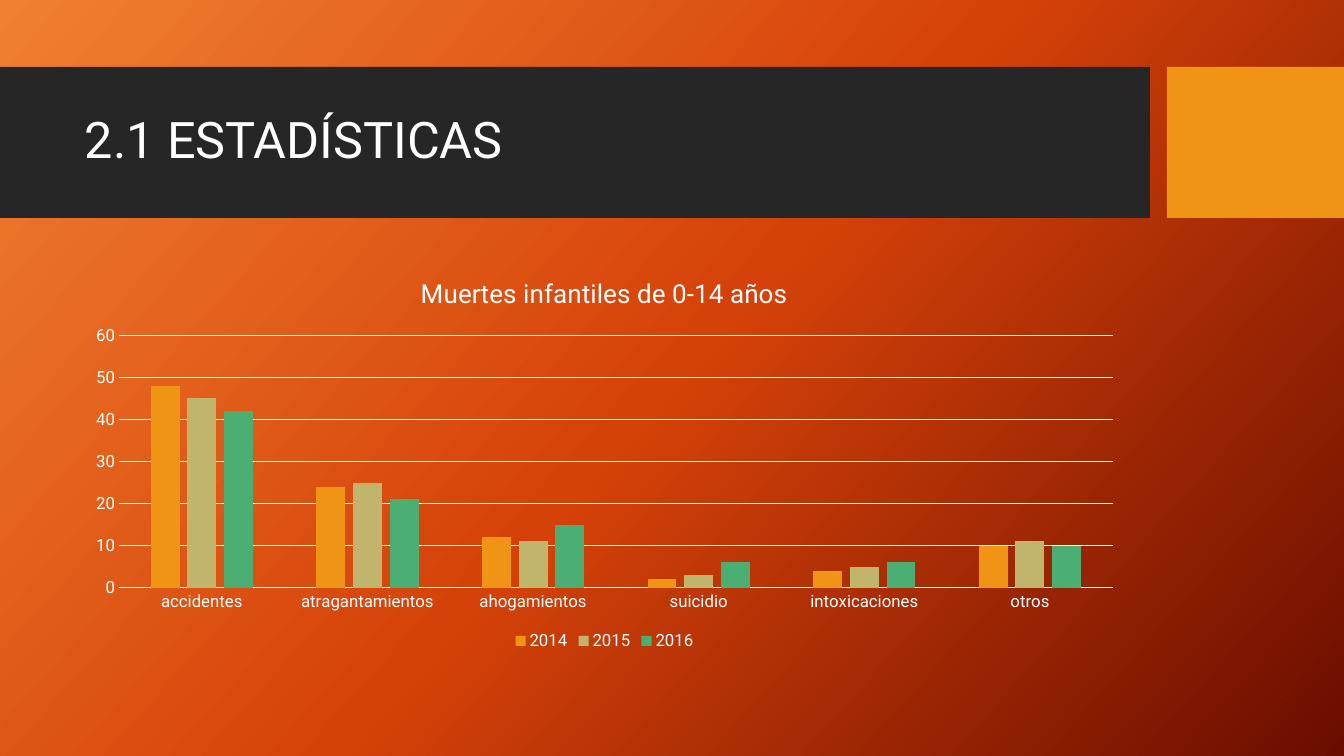
import pptx
import pptx.chart.data
import pptx.dml.color
import pptx.enum.chart
import pptx.enum.shapes
import pptx.enum.text
import pptx.oxml.ns
import pptx.util
from lxml import etree

TITLE = "2.1 ESTADÍSTICAS"
CHART_TITLE = "Muertes infantiles de 0-14 años"
CAUSES = ["accidentes", "atragantamientos", "ahogamientos",
          "suicidio", "intoxicaciones", "otros"]
DEATHS = {
    "2014": (48, 24, 12, 2, 4, 10),
    "2015": (45, 25, 11, 3, 5, 11),
    "2016": (42, 21, 15, 6, 6, 10),
}

THEME = {
    "font": "Roboto",
    "text": "FFFFFF",
    "band": "262626",
    "accent": "F09415",
    "series": ("F09415", "C1B56B", "4BAF73"),
    "background": ((0, "F18031"), (50, "D54209"), (100, "6A0D00")),
    "background_angle": 42,
    "title_size": 36,
    "chart_title_size": 18.6,
    "label_size": 12,
    "line_width": 0.75,
}

# Left, top, width, height in px
SLIDE_SIZE = (1344, 756)
BAND = (0, 67, 1150, 151)
ACCENT = (1167, 67, 177, 151)
TITLE_BOX = (75, 83, 1059, 119)
CHART_BOX = (75, 258, 1059, 397)
PX_PER_INCH = 100.8


def emu(box):
    return [pptx.util.Inches(px / PX_PER_INCH) for px in box]


def rgb(color):
    return pptx.dml.color.RGBColor.from_string(color)


def style_font(font, size):
    font.name = THEME["font"]
    font.size = pptx.util.Pt(size)
    font.bold = False
    font.color.rgb = rgb(THEME["text"])


def style_line(line):
    line.color.rgb = rgb(THEME["text"])
    line.width = pptx.util.Pt(THEME["line_width"])


def paint_background(s):
    qn = pptx.oxml.ns.qn
    fill = s.background.fill
    fill.gradient()
    # The angle property counts counter-clockwise
    fill.gradient_angle = 360 - THEME["background_angle"]
    stops = s.element.find(".//" + qn("a:gsLst"))
    for stop in list(stops):
        stops.remove(stop)
    for percent, color in THEME["background"]:
        stop = etree.SubElement(stops, qn("a:gs"), pos=str(percent * 1000))
        etree.SubElement(stop, qn("a:srgbClr"), val=color)


def add_block(s, box, color):
    sp = s.shapes.add_shape(pptx.enum.shapes.MSO_SHAPE.RECTANGLE, *emu(box))
    sp.shadow.inherit = False
    sp.fill.solid()
    sp.fill.fore_color.rgb = rgb(color)
    sp.line.fill.background()


def add_title(s):
    tf = s.shapes.add_textbox(*emu(TITLE_BOX)).text_frame
    tf.word_wrap = True
    tf.vertical_anchor = pptx.enum.text.MSO_ANCHOR.MIDDLE
    p = tf.paragraphs[0]
    p.text = TITLE
    p.line_spacing = 0.9
    style_font(p.font, THEME["title_size"])


def add_deaths_chart(s):
    enum = pptx.enum.chart
    data = pptx.chart.data.CategoryChartData()
    data.categories = CAUSES
    for year, values in DEATHS.items():
        data.add_series(year, values)
    chart = s.shapes.add_chart(
        enum.XL_CHART_TYPE.COLUMN_CLUSTERED, *emu(CHART_BOX), data).chart
    style_font(chart.font, THEME["label_size"])

    chart.has_title = True
    p = chart.chart_title.text_frame.paragraphs[0]
    p.text = CHART_TITLE
    style_font(p.font, THEME["chart_title_size"])
    chart.chart_title.include_in_layout = False

    chart.has_legend = True
    chart.legend.position = enum.XL_LEGEND_POSITION.BOTTOM
    chart.legend.include_in_layout = False
    style_font(chart.legend.font, THEME["label_size"])

    plot = chart.plots[0]
    plot.vary_by_categories = False
    plot.gap_width = 219
    plot.overlap = -27
    for series, color in zip(plot.series, THEME["series"]):
        series.format.fill.solid()
        series.format.fill.fore_color.rgb = rgb(color)

    for axis in (chart.category_axis, chart.value_axis):
        axis.major_tick_mark = enum.XL_TICK_MARK.NONE
        axis.minor_tick_mark = enum.XL_TICK_MARK.NONE
        style_font(axis.tick_labels.font, THEME["label_size"])
    style_line(chart.category_axis.format.line)

    axis = chart.value_axis
    axis.minimum_scale, axis.maximum_scale, axis.major_unit = 0, 60, 10
    axis.format.line.fill.background()
    axis.has_major_gridlines = True
    style_line(axis.major_gridlines.format.line)


def main():
    prs = pptx.Presentation()
    prs.slide_width, prs.slide_height = emu(SLIDE_SIZE)
    s = prs.slides.add_slide(prs.slide_layouts[6])
    paint_background(s)
    add_block(s, BAND, THEME["band"])
    add_block(s, ACCENT, THEME["accent"])
    add_title(s)
    add_deaths_chart(s)
    prs.save("out.pptx")


if __name__ == "__main__":
    main()
